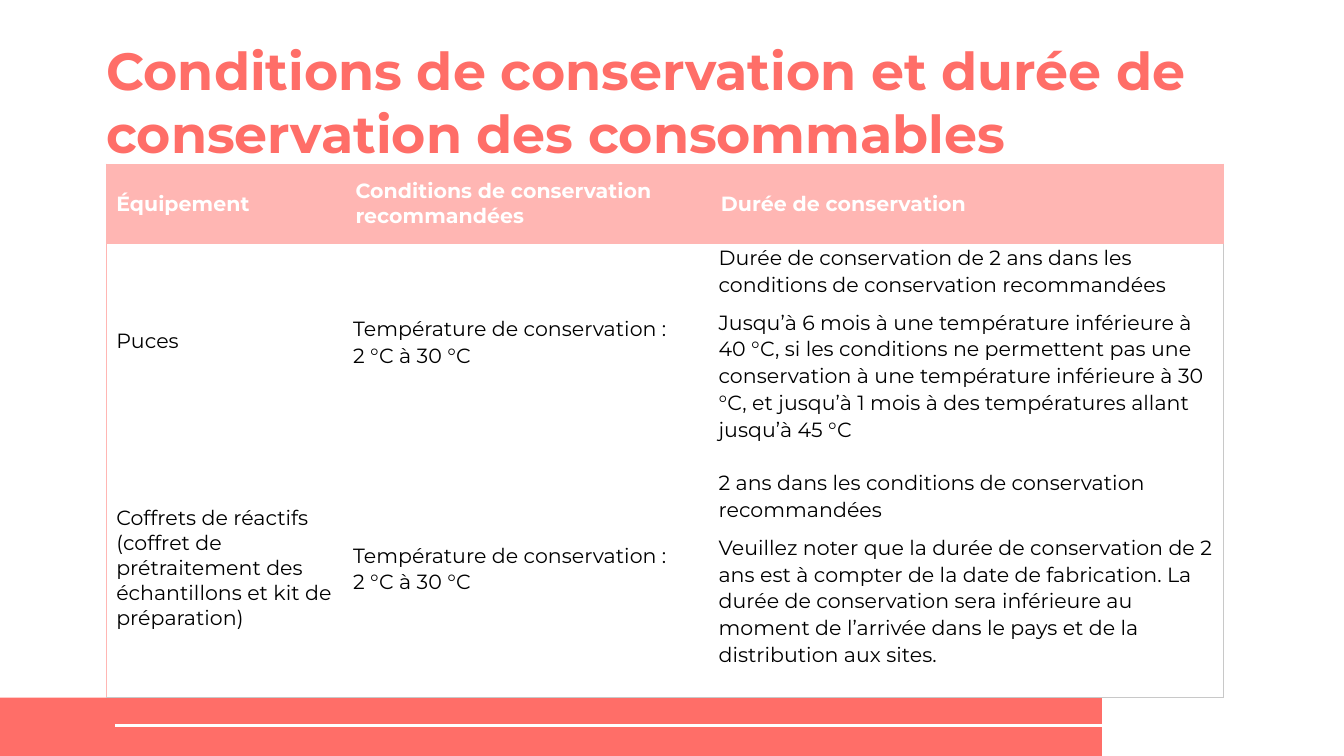
from lxml import etree
from pptx import Presentation
from pptx.dml.color import RGBColor
from pptx.enum import shapes, text
from pptx.oxml import ns
from pptx.util import Pt

CORAL = RGBColor(0xFF, 0x6E, 0x68)
PINK = RGBColor(0xFF, 0xB6, 0xB3)
GREY = RGBColor(0xC8, 0xC8, 0xC8)
WHITE = RGBColor(0xFF, 0xFF, 0xFF)
BLACK = RGBColor(0, 0, 0)
FONT = "Montserrat"
NO_STYLE = "{2D5ABB26-0587-4C30-8999-92F81FD0307C}"

TITLE = "Conditions de conservation et durée de conservation des consommables"
COLS = [128.2, 195.8, 274.3]
ROWS = [42.5, 100, 138.2]
CELLS = [
    [["Équipement"], ["Conditions de conservation recommandées"], ["Durée de conservation"]],
    [
        ["Puces"],
        ["Température de conservation : \n2 °C à 30 °C"],
        [
            "Durée de conservation de 2 ans dans les conditions de conservation recommandées",
            "Jusqu’à 6 mois à une température inférieure à 40 °C, si les conditions ne "
            "permettent pas une conservation à une température inférieure à 30 °C, et "
            "jusqu’à 1 mois à des températures allant jusqu’à 45 °C",
        ],
    ],
    [
        ["Coffrets de réactifs (coffret de prétraitement des échantillons et kit de préparation)"],
        ["Température de conservation :\n2 °C à 30 °C"],
        [
            "2 ans dans les conditions de conservation recommandées",
            "Veuillez noter que la durée de conservation de 2 ans est à compter de la date "
            "de fabrication. La durée de conservation sera inférieure au moment de l’arrivée "
            "dans le pays et de la distribution aux sites.",
        ],
    ],
]


def set_font(p, size, color, bold):
    for r in p.runs:
        f = r.font
        f.name, f.size, f.bold = FONT, Pt(size), bold
        f.color.rgb = color


def set_margins(obj, x, y):
    obj.margin_left = obj.margin_right = Pt(x)
    obj.margin_top = obj.margin_bottom = Pt(y)


def add_footer(s):
    sp = s.shapes.add_shape(shapes.MSO_SHAPE.RECTANGLE, 0, Pt(373.8), Pt(590.4), Pt(31.2))
    sp.shadow.inherit = False
    sp.fill.solid()
    sp.fill.fore_color.rgb = CORAL
    sp.line.fill.background()
    ln = s.shapes.add_connector(
        shapes.MSO_CONNECTOR.STRAIGHT, Pt(594.7), Pt(388.8), Pt(61.5), Pt(388.8))
    ln.line.color.rgb = WHITE
    ln.line.width = Pt(1.5)
    etree.SubElement(ln._element.spPr, ns.qn("a:effectLst"))


def add_title(s):
    tf = s.shapes.add_textbox(Pt(57), Pt(52), Pt(630), Pt(36)).text_frame
    tf.word_wrap = True
    tf.vertical_anchor = text.MSO_ANCHOR.BOTTOM
    set_margins(tf, 0, 0)
    tf.text = TITLE
    set_font(tf.paragraphs[0], 28, CORAL, True)


def set_border(cell, tag, color):
    ln = etree.SubElement(cell._tc.get_or_add_tcPr(), ns.qn(f"a:{tag}"), w=str(Pt(0.75)))
    fill = etree.SubElement(ln, ns.qn("a:solidFill"))
    etree.SubElement(fill, ns.qn("a:srgbClr"), val=str(color))


def fill_cell(cell, paragraphs, row, col):
    header = row == 0
    plain = header or col == 0
    cell.vertical_anchor = text.MSO_ANCHOR.MIDDLE
    set_margins(cell, *((5.3, 2.65) if plain else (4, 0)))
    tf = cell.text_frame
    for i, content in enumerate(paragraphs):
        p = tf.paragraphs[0] if i == 0 else tf.add_paragraph()
        p.text = content
        set_font(p, 11, WHITE if header else BLACK, header)
        if not plain:
            p.line_spacing = 1.07
        if i < len(paragraphs) - 1:
            p.space_after = Pt(6)
    if col == 0:
        set_border(cell, "lnL", PINK)
    if col == len(COLS) - 1:
        set_border(cell, "lnR", PINK if header else GREY)
    if header:
        set_border(cell, "lnT", PINK)
    if row == len(ROWS) - 1:
        set_border(cell, "lnB", GREY)
    if header:
        cell.fill.solid()
        cell.fill.fore_color.rgb = PINK
    else:
        cell.fill.background()


def add_storage_table(s):
    frame = s.shapes.add_table(
        len(ROWS), len(COLS), Pt(57), Pt(88), Pt(sum(COLS)), Pt(sum(ROWS)))
    tbl = frame.table
    tbl.horz_banding = False
    tbl._tbl.tblPr.find(ns.qn("a:tableStyleId")).text = NO_STYLE
    for column, width in zip(tbl.columns, COLS):
        column.width = Pt(width)
    for row, height in enumerate(ROWS):
        tbl.rows[row].height = Pt(height)
        for col, paragraphs in enumerate(CELLS[row]):
            fill_cell(tbl.cell(row, col), paragraphs, row, col)


def main():
    prs = Presentation()
    prs.slide_width, prs.slide_height = Pt(720), Pt(405)
    s = prs.slides.add_slide(prs.slide_layouts[6])
    add_footer(s)
    add_title(s)
    add_storage_table(s)
    prs.save("out.pptx")


if __name__ == "__main__":
    main()
